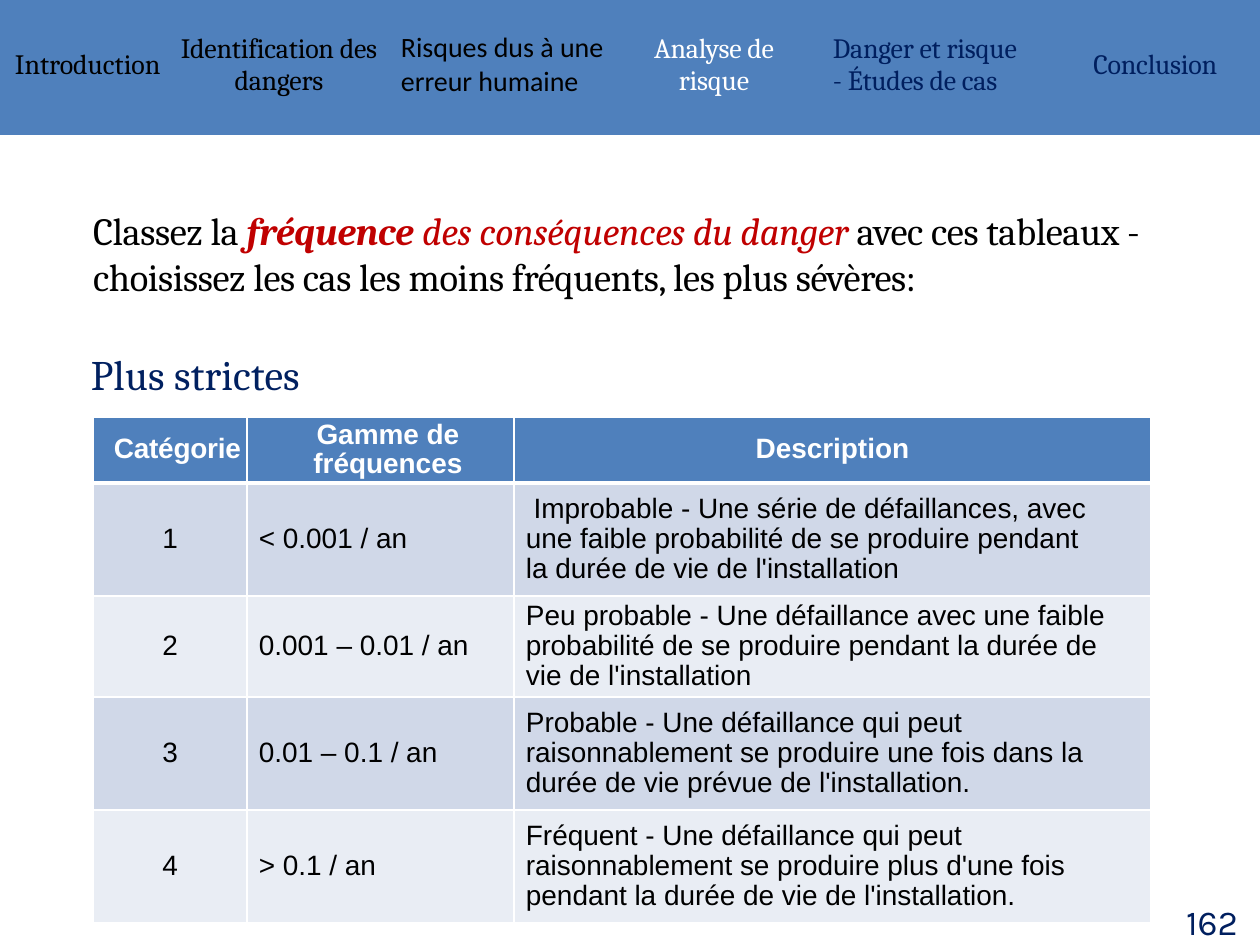
"""Build the slide on classifying the frequency of hazard consequences."""
from dataclasses import dataclass

from lxml import etree
from pptx import Presentation
from pptx.dml.color import RGBColor
from pptx.enum.shapes import MSO_SHAPE
from pptx.enum.text import MSO_ANCHOR, PP_ALIGN
from pptx.oxml.ns import qn
from pptx.util import Emu, Pt

RECTANGLE = MSO_SHAPE.RECTANGLE
MIDDLE = MSO_ANCHOR.MIDDLE
LEFT, CENTER = PP_ALIGN.LEFT, PP_ALIGN.CENTER
EMU_PER_PX = 914400 / 126
NO_STYLE = "{2D5ABB26-0587-4C30-8999-92F81FD0307C}"
BLUE, WHITE, BLACK = "4F80BC", "FFFFFF", "000000"
NAVY, RED = "001F5F", "C00000"
BAND_FILLS = ("D0D8E8", "E9EDF4")


@dataclass
class Style:
    font: str
    size: int
    color: str = BLACK
    bold: bool = False
    align: PP_ALIGN = LEFT
    line_spacing: float = 1.0


@dataclass
class Cell:
    text: str
    style: Style
    fill: str
    left: int = 0
    right: int = 0
    spacing: int = 0


@dataclass
class Phrase:
    text: str
    color: str = BLACK
    bold: bool = False
    italic: bool = False


def px(length: int) -> Emu:
    return Emu(round(length * EMU_PER_PX))


def rgb(value: str) -> RGBColor:
    return RGBColor.from_string(value)


def style_paragraphs(frame, style: Style, spacing: int = 0) -> None:
    for paragraph in frame.paragraphs:
        paragraph.alignment = style.align
        paragraph.line_spacing = style.line_spacing
        paragraph.font.name = style.font
        paragraph.font.size = Pt(style.size)
        paragraph.font.bold = style.bold
        paragraph.font.color.rgb = rgb(style.color)
        if spacing:
            for run in paragraph.runs:
                run.font._element.set("spc", str(spacing))


def add_text(slide, box: tuple, phrases: list[Phrase], style: Style,
             inset: tuple = (0, 0, 0, 0), wrap: bool = True, spacing: int = 0) -> None:
    frame = slide.shapes.add_textbox(*map(px, box)).text_frame
    frame.word_wrap = wrap
    frame.margin_left, frame.margin_top, frame.margin_right, frame.margin_bottom = map(px, inset)
    for phrase in phrases:
        run = frame.paragraphs[0].add_run()
        run.text = phrase.text
        run.font.color.rgb = rgb(phrase.color)
        run.font.bold = phrase.bold
        run.font.italic = phrase.italic
    style_paragraphs(frame, style, spacing)


def add_borders(cell, widths: dict[str, int]) -> None:
    properties = cell._tc.get_or_add_tcPr()
    for side, width in widths.items():
        line = etree.SubElement(properties, qn(f"a:ln{side}"), w=str(Pt(width)))
        fill = etree.SubElement(line, qn("a:solidFill"))
        etree.SubElement(fill, qn("a:srgbClr"), val=WHITE)


def add_grid(slide, origin: tuple, widths: list[int], heights: list[int],
             rows: list[list[Cell]], bordered: bool) -> None:
    size = sum(widths), sum(heights)
    table = slide.shapes.add_table(len(rows), len(widths), *map(px, origin + size)).table
    table._tbl.tblPr.find(qn("a:tableStyleId")).text = NO_STYLE
    for column, width in zip(table.columns, widths):
        column.width = px(width)
    for row, height in zip(table.rows, heights):
        row.height = px(height)
    for row_index, row in enumerate(rows):
        for column_index, content in enumerate(row):
            cell = table.cell(row_index, column_index)
            cell.text = content.text
            cell.vertical_anchor = MIDDLE
            cell.margin_top = cell.margin_bottom = 0
            cell.margin_left, cell.margin_right = px(content.left), px(content.right)
            if bordered:
                add_borders(cell, {"L": 1, "R": 1,
                                   "T": 3 if row_index == 1 else 1,
                                   "B": 3 if row_index == 0 else 1})
            cell.fill.solid()
            cell.fill.fore_color.rgb = rgb(content.fill)
            style_paragraphs(cell.text_frame, content.style, content.spacing)


def add_navigation(slide) -> None:
    band = slide.shapes.add_shape(RECTANGLE, 0, 0, px(1260), px(135))
    band.shadow.inherit = False
    band.fill.solid()
    band.fill.fore_color.rgb = rgb(BLUE)
    band.line.fill.background()
    sections = [
        Cell("Introduction", Style("Cambria", 16), BLUE, left=5),
        Cell("Identification des dangers", Style("Cambria", 16, align=CENTER), BLUE, spacing=-10),
        Cell("Risques dus à une erreur humaine", Style("Calibri", 16), BLUE, left=21),
        Cell("Analyse de risque", Style("Cambria", 16, WHITE, align=CENTER), BLUE, left=1, spacing=-10),
        Cell("Danger et risque\n- Études de cas", Style("Cambria", 16, NAVY), BLUE, left=30, spacing=-10),
        Cell("Conclusion", Style("Cambria", 16, NAVY, align=CENTER), BLUE, left=1, spacing=-10),
    ]
    add_grid(slide, (10, 23), [168, 202, 244, 179, 256, 192], [84], [sections], False)


def add_frequency_table(slide) -> None:
    heading = Style("Arial", 16, WHITE, True, CENTER, 0.96)
    number = Style("Arial", 16, align=CENTER, line_spacing=0.96)
    body = Style("Arial", 16, line_spacing=0.96)
    categories = [
        ("< 0.001 / an", " Improbable - Une série de défaillances, avec une faible probabilité "
                         "de se produire pendant la durée de vie de l'installation"),
        ("0.001 – 0.01 / an", "Peu probable - Une défaillance avec une faible probabilité "
                              "de se produire pendant la durée de vie de l'installation"),
        ("0.01 – 0.1 / an", "Probable - Une défaillance qui peut raisonnablement se produire "
                            "une fois dans la durée de vie prévue de l'installation."),
        ("> 0.1 / an", "Fréquent - Une défaillance qui peut raisonnablement se produire "
                       "plus d'une fois pendant la durée de vie de l'installation."),
    ]
    rows = [[Cell("Catégorie", heading, BLUE, left=15, spacing=-10),
             Cell("Gamme de fréquences", heading, BLUE, left=15),
             Cell("Description", heading, BLUE)]]
    for index, (frequency, description) in enumerate(categories):
        fill = BAND_FILLS[index % 2]
        rows.append([Cell(str(index + 1), number, fill),
                     Cell(frequency, body, fill, left=12),
                     Cell(description, body, fill, left=12, right=45)])
    add_grid(slide, (93, 417), [154, 267, 637], [66, 113, 101, 113, 113], rows, True)


def main() -> None:
    presentation = Presentation()
    presentation.slide_width, presentation.slide_height = px(1260), px(945)
    slide = presentation.slides.add_slide(presentation.slide_layouts[6])
    add_navigation(slide)
    add_text(slide, (1182, 900, 67, 43), [Phrase("162", NAVY)], Style("Karla", 20, NAVY),
             inset=(4, 0, 0, 0))
    add_frequency_table(slide)
    add_text(slide, (92, 207, 1050, 93), [
        Phrase("Classez la "),
        Phrase("fréquence", RED, bold=True, italic=True),
        Phrase(" des conséquences du danger ", RED, italic=True),
        Phrase("avec ces tableaux - choisissez les cas les moins fréquents, les plus sévères:"),
    ], Style("Cambria", 22), inset=(1, 0, 0, 0), spacing=-20)
    add_text(slide, (78, 343, 247, 63), [Phrase("Plus strictes", "002060")],
             Style("Cambria", 24, "002060"), inset=(13, 6, 13, 6), wrap=False, spacing=10)
    presentation.save("out.pptx")


if __name__ == "__main__":
    main()
